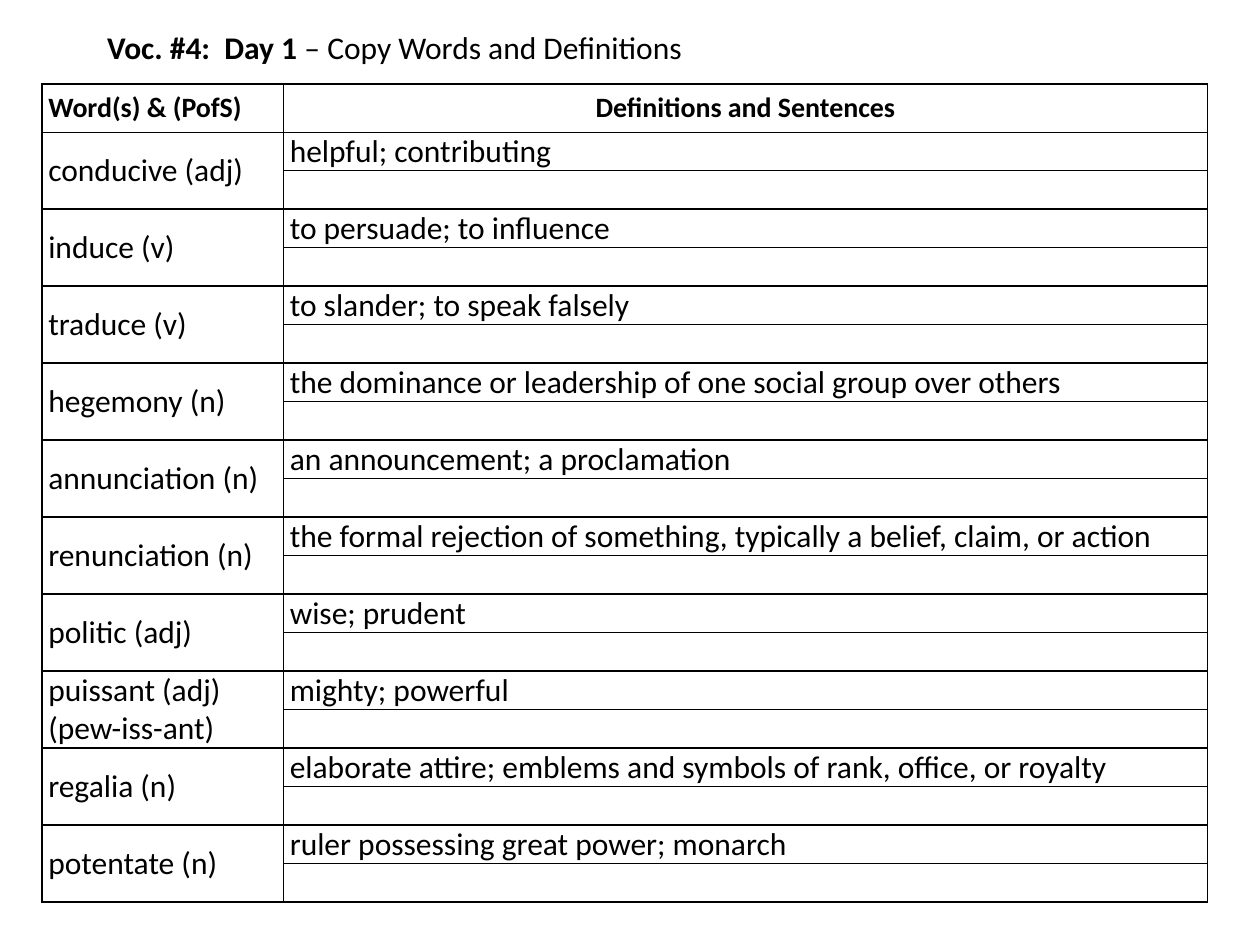
from lxml import etree
from pptx import Presentation
from pptx import util as u
from pptx.dml import color
from pptx.enum import text
from pptx.oxml import ns

COLORS = {"ink": "000000", "page": "FFFFFF"}
HEADS = ("Word(s) & (PofS)", "Definitions and Sentences")
WORDS = [
    ("conducive (adj)", "helpful; contributing"),
    ("induce (v)", "to persuade; to influence"),
    ("traduce (v)", "to slander; to speak falsely"),
    ("hegemony (n)", "the dominance or leadership of one social group over others"),
    ("annunciation (n)", "an announcement; a proclamation"),
    ("renunciation (n)", "the formal rejection of something, typically a belief, claim, or action"),
    ("politic (adj)", "wise; prudent"),
    ("puissant (adj)\n(pew-iss-ant)", "mighty; powerful"),
    ("regalia (n)", "elaborate attire; emblems and symbols of rank, office, or royalty"),
    ("potentate (n)", "ruler possessing great power; monarch"),
]


def apply(obj, **vals):
    for name, val in vals.items():
        setattr(obj, name, val)


class Sheet:
    face = "Calibri"
    line = 1
    pad = 3.6

    def __init__(self, deck):
        self.slide = deck.slides.add_slide(deck.slide_layouts[5])
        back = self.slide.background.fill
        back.solid()
        back.fore_color.rgb = self.rgb("page")

    def rgb(self, key):
        return color.RGBColor.from_string(COLORS[key])

    def font(self, font, size, bold=False):
        apply(font, name=self.face, size=u.Pt(size), bold=bold)
        font.color.rgb = self.rgb("ink")

    def title(self, parts, box, size, indent):
        shape = self.slide.shapes.title
        left, top, width, height = map(u.Pt, box)
        apply(shape, left=left, top=top, width=width, height=height)
        frame = shape.text_frame
        apply(frame, word_wrap=False, auto_size=text.MSO_AUTO_SIZE.SHAPE_TO_FIT_TEXT,
              vertical_anchor=text.MSO_ANCHOR.MIDDLE)
        para = frame.paragraphs[0]
        para.alignment = text.PP_ALIGN.LEFT
        apply(para, line_spacing=1.0, space_before=u.Pt(0))
        para._p.get_or_add_pPr().set("indent", str(u.Pt(indent)))
        for words, bold in parts:
            run = para.add_run()
            run.text = words
            self.font(run.font, size, bold)

    def border(self, cell):
        props = cell._tc.get_or_add_tcPr()
        for side in ("a:lnL", "a:lnR", "a:lnT", "a:lnB"):
            edge = etree.SubElement(props, ns.qn(side), w=str(u.Pt(self.line)))
            fill = etree.SubElement(edge, ns.qn("a:solidFill"))
            etree.SubElement(fill, ns.qn("a:srgbClr"), val=COLORS["ink"])

    def cell(self, cell, words, size, bold=False, align=text.PP_ALIGN.LEFT):
        cell.text = words
        apply(cell, margin_left=u.Pt(self.pad), margin_right=u.Pt(self.pad),
              margin_top=0, margin_bottom=0, vertical_anchor=text.MSO_ANCHOR.MIDDLE)
        self.border(cell)
        cell.fill.background()
        for para in cell.text_frame.paragraphs:
            para.alignment = align
            self.font(para.font, size, bold)
            for run in para.runs:
                self.font(run.font, size, bold)

    def table(self, heads, words, spot, widths, head, row):
        count = 1 + 2 * len(words)
        size = sum(widths), head + row * (count - 1)
        grid = self.slide.shapes.add_table(
            count, len(widths), *map(u.Pt, spot + size)).table
        apply(grid, first_row=False, horz_banding=False)
        for col, width in zip(grid.columns, widths):
            col.width = u.Pt(width)
        for num, line in enumerate(grid.rows):
            line.height = u.Pt(row if num else head)
        aligns = text.PP_ALIGN.LEFT, text.PP_ALIGN.CENTER
        for col, (name, align) in enumerate(zip(heads, aligns)):
            self.cell(grid.cell(0, col), name, 16, True, align)
        for num, pair in enumerate(words):
            top = 1 + 2 * num
            for col in range(2):
                self.cell(grid.cell(top, col), pair[col], 18)
                self.cell(grid.cell(top + 1, col), "", 18)
            grid.cell(top, 0).merge(grid.cell(top + 1, 0))


def main():
    deck = Presentation()
    apply(deck, slide_width=u.Pt(720), slide_height=u.Pt(540))
    sheet = Sheet(deck)
    sheet.title([("Voc. #4:  Day 1 ", True), ("– Copy Words and Definitions", False)],
                (18, 12.5, 384, 29), 18, 36)
    sheet.table(HEADS, WORDS, (24, 48), (138, 528), 27.6, 22)
    deck.save("out.pptx")


if __name__ == "__main__":
    main()
